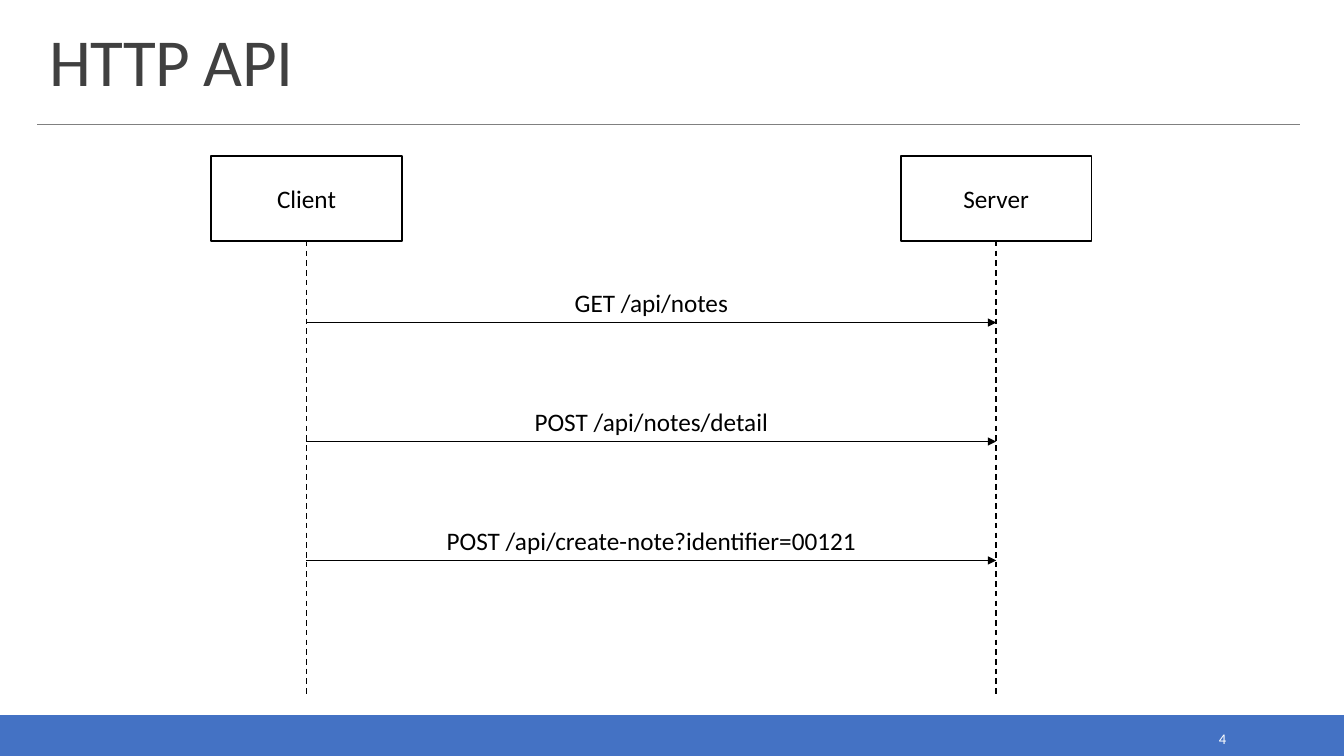
from dataclasses import dataclass

import pptx
import pptx.dml.color
import pptx.enum.dml
import pptx.enum.shapes
import pptx.enum.text
import pptx.oxml.xmlchemy
import pptx.util

Inches = pptx.util.Inches
ALIGN = pptx.enum.text.PP_ALIGN
ANCHOR = pptx.enum.text.MSO_ANCHOR
RECTANGLE = pptx.enum.shapes.MSO_SHAPE.RECTANGLE


@dataclass(frozen=True)
class Theme:
    font: str = "Calibri"
    ink: str = "000000"
    title_ink: str = "404040"
    rule: str = "808080"
    band: str = "4472C4"
    paper: str = "FFFFFF"
    title_size: float = 48
    body_size: float = 18
    number_size: float = 10.5
    outline: float = 1.25
    stroke: float = 1
    hairline: float = 0.5


THEME = Theme()
SLIDE_WIDTH, SLIDE_HEIGHT = 13.33, 7.5

PARTICIPANTS = {"Client": 3.04, "Server": 9.88}
PARTICIPANT_TOP, PARTICIPANT_WIDTH, PARTICIPANT_HEIGHT = 1.55, 1.89, 0.84
LIFELINE_BOTTOM = 6.9

REQUESTS = [
    "GET /api/notes",
    "POST /api/notes/detail",
    "POST /api/create-note?identifier=00121",
]
FIRST_REQUEST, REQUEST_STEP = 3.2, 1.18
LABEL_HEIGHT = 0.4


def rgb(color):
    return pptx.dml.color.RGBColor.from_string(color)


def write(shape, text, size, color, align=ALIGN.LEFT, anchor=ANCHOR.MIDDLE):
    frame = shape.text_frame
    frame.word_wrap = True
    frame.vertical_anchor = anchor
    frame.text = text
    paragraph = frame.paragraphs[0]
    paragraph.alignment = align
    font = paragraph.runs[0].font
    font.name = THEME.font
    font.size = pptx.util.Pt(size)
    font.color.rgb = rgb(color)
    return paragraph


def add_text(slide, left, top, width, height, *text_style):
    box = slide.shapes.add_textbox(
        Inches(left), Inches(top), Inches(width), Inches(height))
    return write(box, *text_style)


def add_box(slide, left, top, width, height, line, fill=None):
    box = slide.shapes.add_shape(
        RECTANGLE, Inches(left), Inches(top), Inches(width), Inches(height))
    box.shadow.inherit = False
    if fill:
        box.fill.solid()
        box.fill.fore_color.rgb = rgb(fill)
    else:
        box.fill.background()
    box.line.color.rgb = rgb(line)
    box.line.width = pptx.util.Pt(THEME.outline)
    return box


def add_line(slide, start, end, color, width):
    line = slide.shapes.add_connector(
        pptx.enum.shapes.MSO_CONNECTOR.STRAIGHT,
        *map(Inches, start), *map(Inches, end))
    line.line.color.rgb = rgb(color)
    line.line.width = pptx.util.Pt(width)
    properties = line._element.spPr
    properties.append(pptx.oxml.xmlchemy.OxmlElement("a:effectLst"))
    return line


def add_header(slide):
    title = add_text(slide, 0.39, 0.2, 12.52, 0.84, "HTTP API",
                     THEME.title_size, THEME.title_ink, ALIGN.LEFT, ANCHOR.BOTTOM)
    title.line_spacing = 0.85
    title.runs[0].font._element.set("spc", "-50")
    add_line(slide, (0.37, 1.23), (12.89, 1.23), THEME.rule, THEME.hairline)


def add_footer(slide):
    add_box(slide, 0, 7.1, SLIDE_WIDTH, 0.4, THEME.band, THEME.band)
    add_text(slide, 10.83, 7.19, 1.43, 0.28, "4",
             THEME.number_size, THEME.paper, ALIGN.RIGHT)


def add_participant(slide, name, center):
    """Draw a named box with its dashed lifeline below."""
    box = add_box(slide, center - PARTICIPANT_WIDTH / 2, PARTICIPANT_TOP,
                  PARTICIPANT_WIDTH, PARTICIPANT_HEIGHT, THEME.ink)
    write(box, name, THEME.body_size, THEME.ink, ALIGN.CENTER)
    lifeline = add_line(slide, (center, PARTICIPANT_TOP + PARTICIPANT_HEIGHT),
                        (center, LIFELINE_BOTTOM), THEME.ink, THEME.stroke)
    lifeline.line.dash_style = pptx.enum.dml.MSO_LINE.DASH


def add_request(slide, text, y):
    """Draw a labelled arrow from client to server."""
    client, server = PARTICIPANTS.values()
    arrow = add_line(slide, (client, y), (server, y), THEME.ink, THEME.stroke)
    head = pptx.oxml.xmlchemy.OxmlElement("a:tailEnd")
    head.set("type", "triangle")
    arrow.line._get_or_add_ln().append(head)
    add_text(slide, client, y - LABEL_HEIGHT, server - client, LABEL_HEIGHT,
             text, THEME.body_size, THEME.ink, ALIGN.CENTER, ANCHOR.TOP)


def main():
    deck = pptx.Presentation()
    deck.slide_width = Inches(SLIDE_WIDTH)
    deck.slide_height = Inches(SLIDE_HEIGHT)
    slide = deck.slides.add_slide(deck.slide_layouts[6])

    add_footer(slide)
    add_header(slide)
    for name, center in PARTICIPANTS.items():
        add_participant(slide, name, center)
    for index, request in enumerate(REQUESTS):
        add_request(slide, request, FIRST_REQUEST + index * REQUEST_STEP)

    deck.save("out.pptx")


if __name__ == "__main__":
    main()
